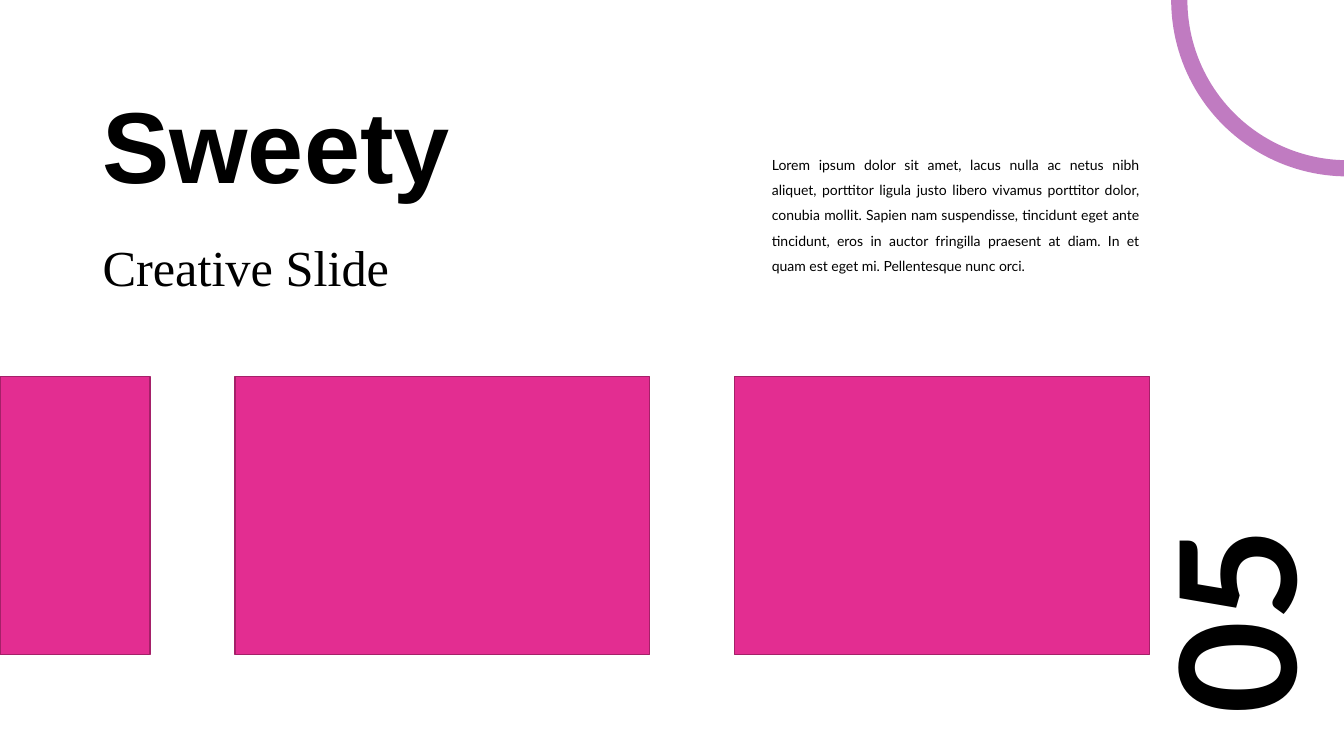
from lxml import etree
from pptx import Presentation
from pptx.dml.color import RGBColor
from pptx.enum.shapes import MSO_SHAPE
from pptx.enum.text import PP_ALIGN
from pptx.oxml.ns import qn
from pptx.util import Pt

RECTANGLE = MSO_SHAPE.RECTANGLE
BLOCK_ARC = MSO_SHAPE.BLOCK_ARC
LEFT = PP_ALIGN.LEFT
JUSTIFY = PP_ALIGN.JUSTIFY

COLORS = {
    "text": "000000",
    "card": "E32D91",
    "card_line": "A52069",
    "arc": "962399",
}

BODY = (
    "Lorem ipsum dolor sit amet, lacus nulla ac netus nibh aliquet, "
    "porttitor ligula justo libero vivamus porttitor dolor, conubia mollit. "
    "Sapien nam suspendisse, tincidunt eget ante tincidunt, eros in auctor "
    "fringilla praesent at diam. In et quam est eget mi. Pellentesque nunc orci."
)


def write_text(frame, text, font="Lato", size=10, bold=False, color="text",
               align=LEFT, spacing=1.0):
    frame.word_wrap = True
    paragraph = frame.paragraphs[0]
    paragraph.alignment = align
    paragraph.line_spacing = spacing
    run = paragraph.add_run()
    run.text = text
    run.font.name = font
    run.font.size = Pt(size)
    run.font.bold = bold
    run.font.color.rgb = RGBColor.from_string(COLORS[color])


class SlideBuilder:
    def __init__(self, slide, colors):
        self.slide = slide
        self.colors = colors

    def shape(self, kind, left, top, width, height, fill):
        shape = self.slide.shapes.add_shape(
            kind, Pt(left), Pt(top), Pt(width), Pt(height))
        shape.shadow.inherit = False
        shape.fill.solid()
        shape.fill.fore_color.rgb = RGBColor.from_string(self.colors[fill])
        return shape

    def card(self, left, top, width, height):
        card = self.shape(RECTANGLE, left, top, width, height, "card")
        card.line.color.rgb = RGBColor.from_string(self.colors["card_line"])
        card.line.width = Pt(1)

    def quarter_ring(self, left, top, diameter, thickness, rotation, opacity):
        ring = self.shape(BLOCK_ARC, left, top, diameter, diameter, "arc")
        ring.line.fill.background()
        ring.rotation = rotation
        for index, value in enumerate((108, 162, thickness / diameter)):
            ring.adjustments[index] = value
        color = ring.fill._xPr.find(f"{qn('a:solidFill')}/{qn('a:srgbClr')}")
        etree.SubElement(color, qn("a:alpha"), val=str(opacity * 1000))

    def text(self, left, top, width, height, text, rotation=0, **style):
        box = self.slide.shapes.add_textbox(
            Pt(left), Pt(top), Pt(width), Pt(height))
        box.rotation = rotation
        write_text(box.text_frame, text, **style)


def main():
    presentation = Presentation()
    presentation.slide_width = Pt(960)
    presentation.slide_height = Pt(540)
    slide = presentation.slides.add_slide(presentation.slide_layouts[6])
    builder = SlideBuilder(slide, COLORS)

    card_width, card_gap, first_left = 296.4, 60.6, -189.2
    for index in range(3):
        left = first_left + index * (card_width + card_gap)
        visible_left = max(left, 0)
        builder.card(visible_left, 269, left + card_width - visible_left, 198.6)

    builder.text(806.4, 369.4, 149, 146.9, "05", rotation=270, size=115, bold=True)
    builder.text(66.2, 55.4, 331.2, 113.8, "Sweety", font="Arial", size=72, bold=True)
    builder.text(66.2, 164.9, 290.9, 51.1, "Creative Slide",
                 font="Times New Roman", size=36)
    builder.text(544.3, 102.2, 276.5, 97.9, BODY, align=JUSTIFY, spacing=1.5)
    builder.quarter_ring(836.6, -126, 252, 11.6, rotation=270, opacity=60)

    presentation.save("out.pptx")


if __name__ == "__main__":
    main()
